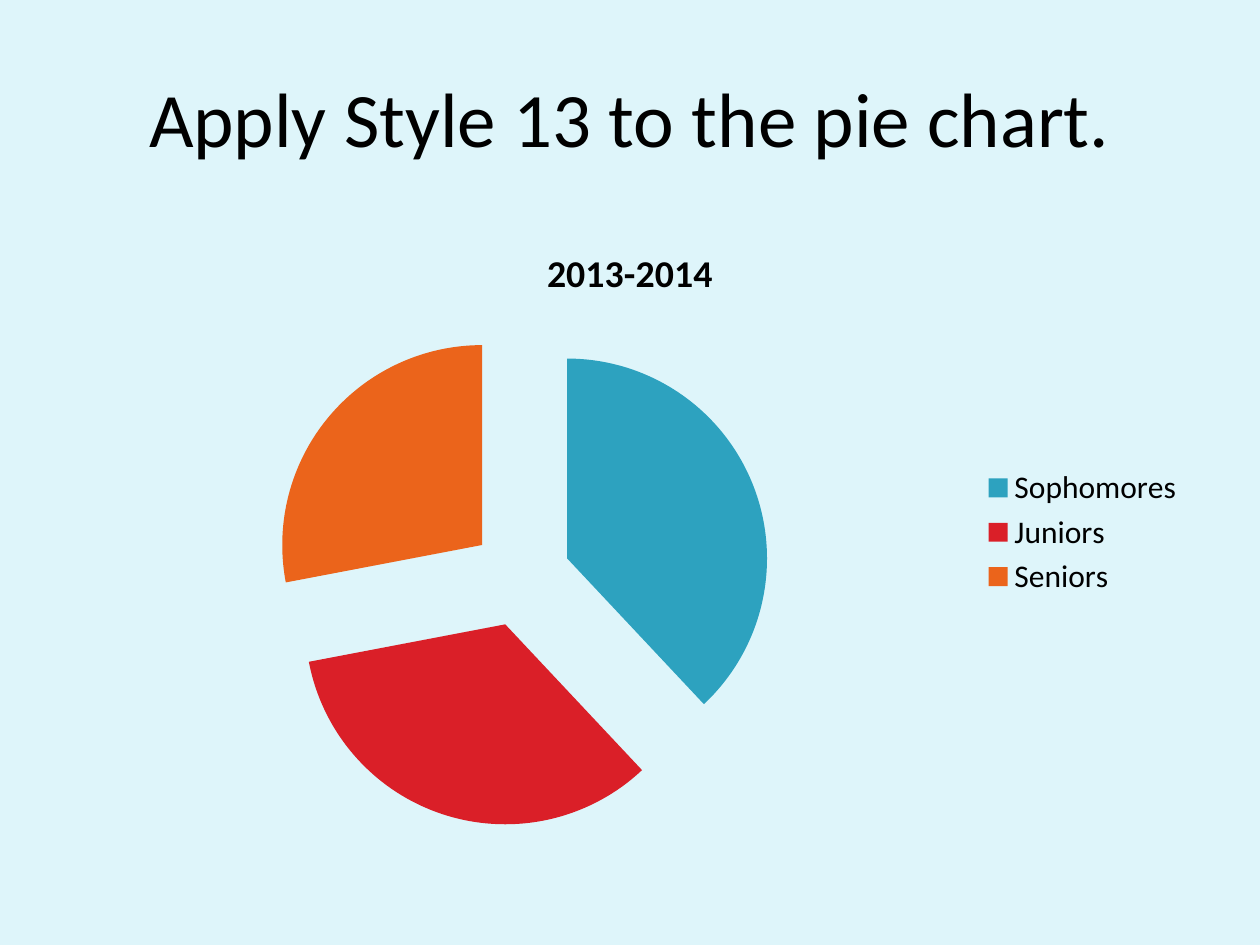
import pptx
import pptx.chart.data
import pptx.dml.color
import pptx.enum.chart
import pptx.enum.text
import pptx.util

Inches = pptx.util.Inches
FONT = "Calibri"
COLORS = {
    "back": "DEF5FA",
    "text": "000000",
    "Sophomores": "2DA2BF",
    "Juniors": "DA1F28",
    "Seniors": "EB641B",
}
YEARS = "2013-2014"
SHARES = {"Sophomores": 38, "Juniors": 34, "Seniors": 28}


def paint(fill, name):
    fill.solid()
    fill.fore_color.rgb = pptx.dml.color.RGBColor.from_string(COLORS[name])


def style(font, size, bold=False):
    font.name = FONT
    font.size = pptx.util.Pt(size)
    font.bold = bold
    paint(font.fill, "text")


def write(frame, text, size, bold=False):
    """Put one centred, formatted line into a text frame."""
    frame.text = text
    line = frame.paragraphs[0]
    line.alignment = pptx.enum.text.PP_ALIGN.CENTER
    style(line.runs[0].font, size, bold)


def add_title(slide, text):
    title = slide.shapes.title
    title.left, title.top = Inches(0.5), Inches(0.3)
    title.width, title.height = Inches(9), Inches(1.25)
    title.text_frame.vertical_anchor = pptx.enum.text.MSO_ANCHOR.MIDDLE
    write(title.text_frame, text, 44)


def add_pie(slide):
    data = pptx.chart.data.CategoryChartData()
    data.categories = list(SHARES)
    data.add_series(YEARS, list(SHARES.values()))
    chart = slide.shapes.add_chart(
        pptx.enum.chart.XL_CHART_TYPE.PIE_EXPLODED,
        Inches(0.5), Inches(1.75), Inches(9), Inches(4.95), data,
    ).chart
    style(chart.font, 18)
    write(chart.chart_title.text_frame, YEARS, 21.6, bold=True)
    chart.has_legend = True
    chart.legend.position = pptx.enum.chart.XL_LEGEND_POSITION.RIGHT
    chart.legend.include_in_layout = False
    style(chart.legend.font, 18)
    plot = chart.plots[0]
    plot.vary_by_categories = True
    for i, name in enumerate(SHARES):
        paint(plot.series[0].points[i].format.fill, name)


def main():
    deck = pptx.Presentation()
    deck.slide_width, deck.slide_height = Inches(10), Inches(7.5)
    slide = deck.slides.add_slide(deck.slide_layouts[5])
    paint(slide.background.fill, "back")
    add_title(slide, "Apply Style 13 to the pie chart.")
    add_pie(slide)
    deck.save("out.pptx")


if __name__ == "__main__":
    main()
